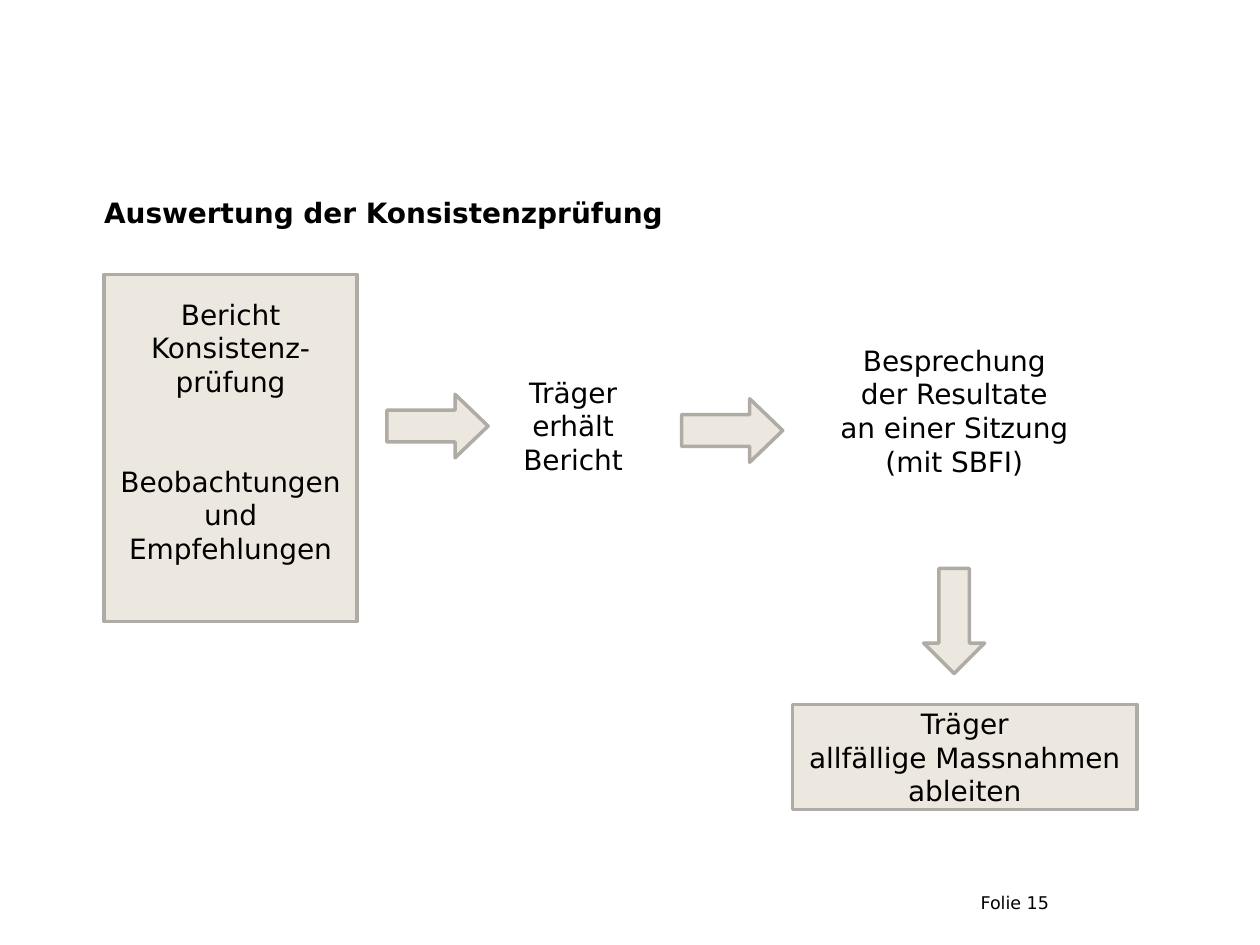
from typing import NamedTuple

from pptx import Presentation
from pptx.dml.color import RGBColor
from pptx.enum.shapes import MSO_SHAPE
from pptx.enum.text import MSO_ANCHOR, MSO_AUTO_SIZE, PP_ALIGN
from pptx.util import Cm, Pt

FONT = "DejaVu Sans"
BLACK = RGBColor(0x00, 0x00, 0x00)
SAND = RGBColor(0xED, 0xE8, 0xDF)
GREY = RGBColor(0xAF, 0xAC, 0xA5)
LINE = 19  # height of one text line in points


class Area(NamedTuple):
    left: float
    top: float
    width: float
    height: float


class Step(NamedTuple):
    area: Area
    texts: list[str]
    framed: bool
    gap: int = 0  # space between paragraphs, in points
    foot: float = 0.13  # bottom inset, in cm


class Arrow(NamedTuple):
    area: Area
    kind: MSO_SHAPE
    head: float


STEPS = [
    Step(Area(2.1, 5.53, 5.1, 7), ["Bericht Konsistenz-prüfung",
         "Beobachtungen und Empfehlungen"], True, 2 * LINE, 0.8),
    Step(Area(9.83, 6.68, 3.45, 3.8), ["Träger erhält Bericht"], False),
    Step(Area(16.69, 6.18, 5.1, 4.87),
         ["Besprechung der Resultate an einer Sitzung (mit SBFI)"],
         False, foot=0.8),
    Step(Area(15.98, 14.2, 6.94, 2.12),
         ["Träger", "allfällige Massnahmen ableiten"], True),
]
ARROWS = [
    Arrow(Area(7.8, 7.95, 2.04, 1.28), MSO_SHAPE.RIGHT_ARROW, 0.52),
    Arrow(Area(13.74, 8.04, 2.04, 1.28), MSO_SHAPE.RIGHT_ARROW, 0.52),
    Arrow(Area(18.62, 11.46, 1.23, 2.12), MSO_SHAPE.DOWN_ARROW, 0.5),
]


def add_run(para, text: str, size: int = 16, bold: bool = False) -> None:
    run = para.add_run()
    run.text = text
    font = run.font
    font.name, font.size, font.bold = FONT, Pt(size), bold
    font.color.rgb = BLACK


def lengths(area: Area) -> list[Cm]:
    return [Cm(value) for value in area]


def strip_frame(frame) -> None:
    """Remove the insets and start the text at the top left."""
    frame.margin_left = frame.margin_right = 0
    frame.margin_top = frame.margin_bottom = 0
    frame.vertical_anchor = MSO_ANCHOR.TOP
    frame.auto_size = MSO_AUTO_SIZE.NONE
    frame.word_wrap = True
    frame.paragraphs[0].alignment = PP_ALIGN.LEFT


def paint(shape) -> None:
    shape.shadow.inherit = False
    shape.fill.solid()
    shape.fill.fore_color.rgb = SAND
    shape.line.color.rgb = GREY
    shape.line.width = Pt(2)


def add_step(slide, step: Step) -> None:
    if step.framed:
        box = slide.shapes.add_shape(MSO_SHAPE.RECTANGLE, *lengths(step.area))
        paint(box)
    else:
        box = slide.shapes.add_textbox(*lengths(step.area))
    frame = box.text_frame
    frame.word_wrap = True
    frame.vertical_anchor = MSO_ANCHOR.MIDDLE
    frame.margin_bottom = Cm(step.foot)
    for i, text in enumerate(step.texts):
        para = frame.add_paragraph() if i else frame.paragraphs[0]
        para.alignment = PP_ALIGN.CENTER
        if i and step.gap:
            para.space_before = Pt(step.gap)
        add_run(para, text)


def add_arrow(slide, arrow: Arrow) -> None:
    shape = slide.shapes.add_shape(arrow.kind, *lengths(arrow.area))
    shape.adjustments[1] = arrow.head
    paint(shape)


def main() -> None:
    deck = Presentation()
    deck.slide_width, deck.slide_height = Cm(25.4), Cm(19.05)
    slide = deck.slides.add_slide(deck.slide_layouts[5])

    title = slide.shapes.title
    title.left, title.top, title.width, title.height = lengths(
        Area(2.1, 3.94, 21.4, 1.47))
    strip_frame(title.text_frame)
    add_run(title.text_frame.paragraphs[0],
            "Auswertung der Konsistenzprüfung", bold=True)

    page = slide.shapes.add_textbox(*lengths(Area(19.77, 17.98, 4.57, 1.07)))
    strip_frame(page.text_frame)
    add_run(page.text_frame.paragraphs[0], "Folie 15", 10)

    for step in STEPS:
        add_step(slide, step)
    for arrow in ARROWS:
        add_arrow(slide, arrow)
    deck.save("out.pptx")


if __name__ == "__main__":
    main()
